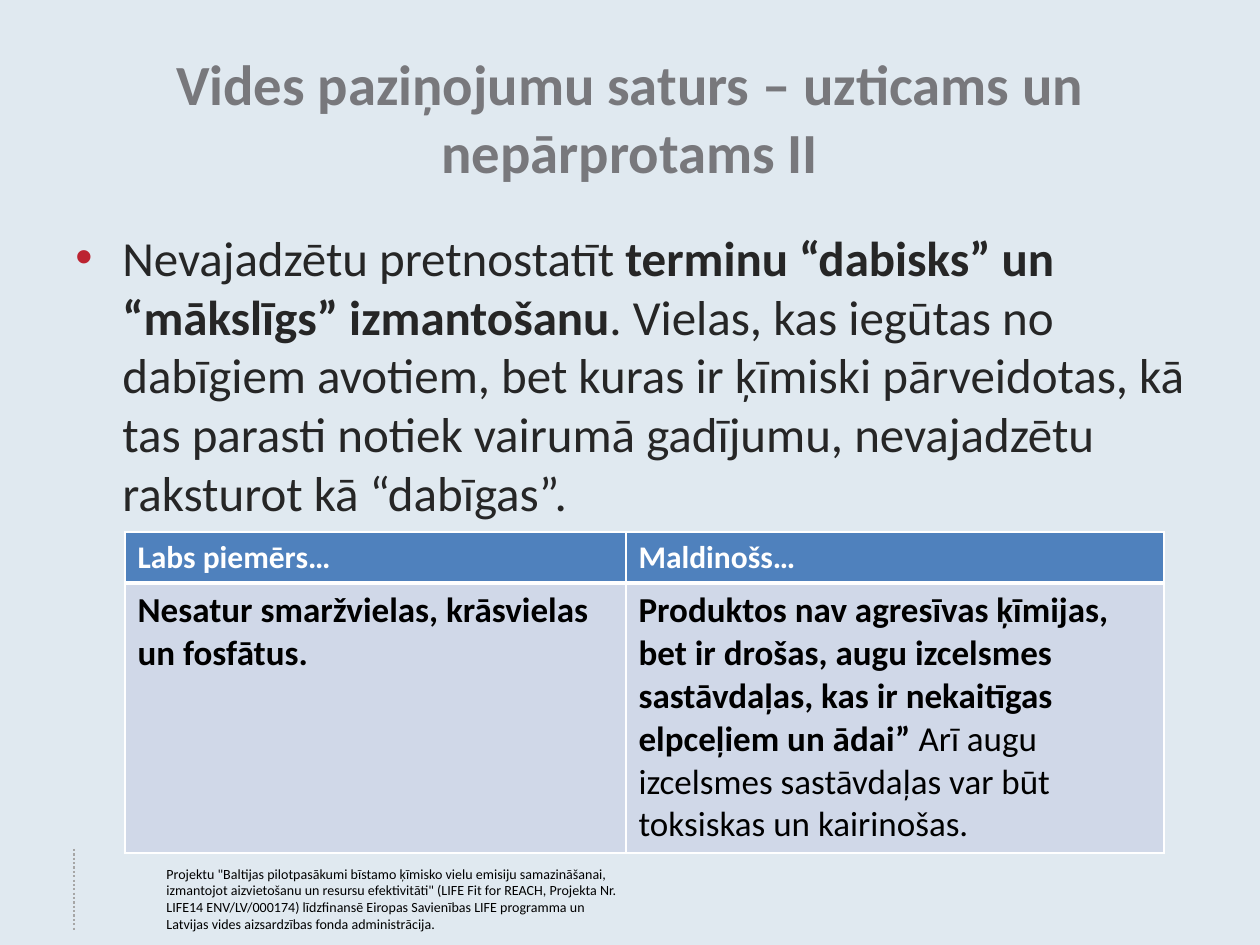
from dataclasses import dataclass

from lxml.etree import SubElement
from pptx import Presentation
from pptx.dml.color import RGBColor
from pptx.enum.dml import MSO_LINE
from pptx.enum.shapes import MSO_CONNECTOR
from pptx.enum.text import MSO_ANCHOR, PP_ALIGN
from pptx.oxml.ns import qn
from pptx.util import Emu, Pt

PX_PER_INCH = 126
FONT = "Calibri"

BACKGROUND = RGBColor(0xE0, 0xE9, 0xF0)
TITLE_GRAY = RGBColor(0x78, 0x78, 0x7C)
BODY_GRAY = RGBColor(0x26, 0x26, 0x26)
RULE_GRAY = RGBColor(0xA6, 0xA6, 0xA6)
BULLET_RED = RGBColor(0xBC, 0x23, 0x31)
HEADER_BLUE = RGBColor(0x4F, 0x81, 0xBD)
CELL_BLUE = RGBColor(0xD0, 0xD8, 0xE8)
WHITE = RGBColor(0xFF, 0xFF, 0xFF)
BLACK = RGBColor(0, 0, 0)


@dataclass(frozen=True)
class Span:
    text: str
    bold: bool = False


@dataclass(frozen=True)
class RowStyle:
    height: int
    size: int
    color: RGBColor
    fill: RGBColor
    bottom_border: int


@dataclass(frozen=True)
class TableRow:
    style: RowStyle
    cells: tuple[tuple[Span, ...], ...]


HEADER = RowStyle(51, 18, WHITE, HEADER_BLUE, 3)
EXAMPLE = RowStyle(270, 20, BLACK, CELL_BLUE, 1)
COLUMN_WIDTHS = (501, 538)
ROWS = (
    TableRow(HEADER, ((Span("Labs piemērs…", True),), (Span("Maldinošs…", True),))),
    TableRow(EXAMPLE, (
        (Span("Nesatur smaržvielas, krāsvielas un fosfātus.", True),),
        (Span("Produktos nav agresīvas ķīmijas, bet ir drošas, augu izcelsmes "
              "sastāvdaļas, kas ir nekaitīgas elpceļiem un ādai” ", True),
         Span("Arī augu izcelsmes sastāvdaļas var būt toksiskas un kairinošas.")),
    )),
)

TITLE = (Span("Vides paziņojumu saturs – uzticams un nepārprotams II", True),)
BODY = (
    Span("Nevajadzētu pretnostatīt "),
    Span("terminu “dabisks” un “mākslīgs” izmantošanu", True),
    Span(". Vielas, kas iegūtas no dabīgiem avotiem, bet kuras ir ķīmiski pārveidotas, "
         "kā tas parasti notiek vairumā gadījumu, nevajadzētu raksturot kā “dabīgas”."),
)
FUNDING = (
    Span("Projektu \"Baltijas pilotpasākumi bīstamo ķīmisko vielu emisiju samazināšanai, "
         "izmantojot aizvietošanu un resursu efektivitāti\" (LIFE Fit for REACH, Projekta Nr. "
         "LIFE14 ENV/LV/000174) līdzfinansē Eiropas Savienības LIFE programma un "
         "Latvijas vides aizsardzības fonda administrācija."),
)


def px(length: int) -> Emu:
    return Emu(round(length * 914400 / PX_PER_INCH))


def write_text(frame, spans: tuple[Span, ...], *, size: float, color: RGBColor,
               align=PP_ALIGN.LEFT, anchor=MSO_ANCHOR.TOP, bullet: RGBColor | None = None) -> None:
    frame.word_wrap = True
    frame.vertical_anchor = anchor
    para = frame.paragraphs[0]
    para.alignment = align
    if bullet is not None:
        add_bullet(para, bullet, indent=47)
    for span in spans:
        run = para.add_run()
        run.text = span.text
        font = run.font
        font.name, font.size, font.bold = FONT, Pt(size), span.bold
        font.color.rgb = color


def add_bullet(para, color: RGBColor, indent: int) -> None:
    properties = para._p.get_or_add_pPr()
    properties.set("marL", str(px(indent)))
    properties.set("indent", str(-px(indent)))
    bullet_color = SubElement(properties, qn("a:buClr"))
    SubElement(bullet_color, qn("a:srgbClr"), val=str(color))
    SubElement(properties, qn("a:buFont"), typeface="Arial")
    SubElement(properties, qn("a:buChar"), char="•")


def set_borders(cell, bottom: int, top: int) -> None:
    """Add white borders; call before the fill, which must follow them."""
    properties = cell._tc.get_or_add_tcPr()
    for side, width in (("L", 1), ("R", 1), ("T", top), ("B", bottom)):
        line = SubElement(properties, qn(f"a:ln{side}"), w=str(Pt(width)))
        fill = SubElement(line, qn("a:solidFill"))
        SubElement(fill, qn("a:srgbClr"), val=str(WHITE))


def add_text(page, left: int, top: int, width: int, height: int,
             spans: tuple[Span, ...], **text_format) -> None:
    box = page.shapes.add_textbox(px(left), px(top), px(width), px(height))
    write_text(box.text_frame, spans, **text_format)


def add_examples(page, left: int, top: int) -> None:
    height = sum(row.style.height for row in ROWS)
    table = page.shapes.add_table(len(ROWS), len(COLUMN_WIDTHS), px(left), px(top),
                                  px(sum(COLUMN_WIDTHS)), px(height)).table
    for column, width in zip(table.columns, COLUMN_WIDTHS):
        column.width = px(width)
    top_border = 1
    for row_index, row in enumerate(ROWS):
        style = row.style
        table.rows[row_index].height = px(style.height)
        for column_index, spans in enumerate(row.cells):
            cell = table.cell(row_index, column_index)
            set_borders(cell, style.bottom_border, top_border)
            cell.fill.solid()
            cell.fill.fore_color.rgb = style.fill
            write_text(cell.text_frame, spans, size=style.size, color=style.color)
        top_border = style.bottom_border


def add_dotted_rule(page, x: int, top: int, bottom: int) -> None:
    rule = page.shapes.add_connector(MSO_CONNECTOR.STRAIGHT, px(x), px(top), px(x), px(bottom))
    rule.line.color.rgb = RULE_GRAY
    rule.line.width = Pt(1.25)
    rule.line.dash_style = MSO_LINE.ROUND_DOT
    SubElement(rule._element.spPr, qn("a:effectLst"))


def main() -> None:
    deck = Presentation()
    deck.slide_width, deck.slide_height = px(1260), px(945)
    page = deck.slides.add_slide(deck.slide_layouts[5])
    page.background.fill.solid()
    page.background.fill.fore_color.rgb = BACKGROUND

    # Footer
    add_dotted_rule(page, 74, 849, 931)
    add_text(page, 154, 859, 486, 81, FUNDING, size=8, color=BLACK)

    # Title
    title = page.shapes.title
    title.left, title.top, title.width, title.height = px(63), px(38), px(1134), px(158)
    write_text(title.text_frame, TITLE, size=32.4, color=TITLE_GRAY,
               align=PP_ALIGN.CENTER, anchor=MSO_ANCHOR.MIDDLE)

    # Advice and examples
    add_text(page, 63, 221, 1134, 624, BODY, size=28, color=BODY_GRAY, bullet=BULLET_RED)
    add_examples(page, 125, 532)

    deck.save("out.pptx")


if __name__ == "__main__":
    main()
